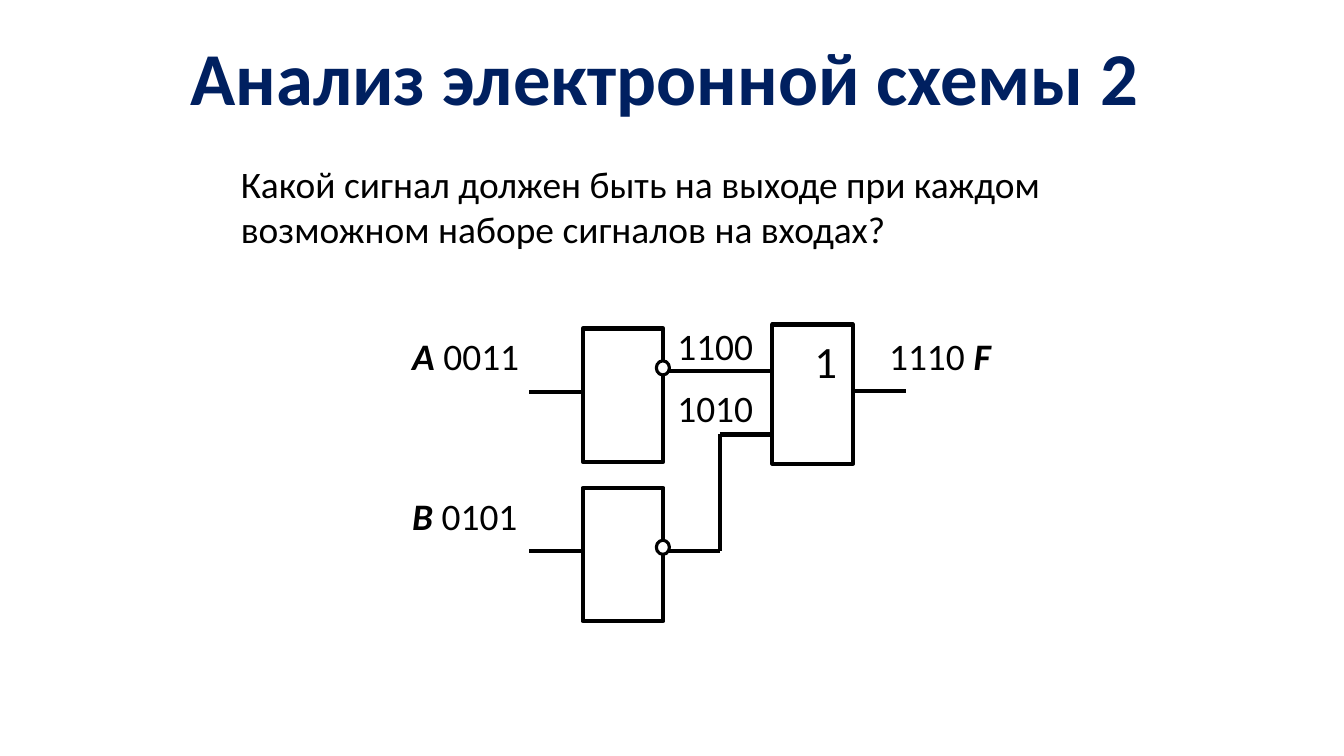
from pptx import Presentation
from pptx import util as u
from pptx.dml import color
from pptx.enum import shapes, text
from pptx.oxml import ns
from lxml import etree


def rgb(value):
    return color.RGBColor.from_string(value)


class Circuit:
    """Style and drawing methods for one slide."""
    font, ink, paper, navy = "Calibri", "000000", "FFFFFF", "002060"
    size, wire_width, ring_width = 26.7, 3, 2.25

    def __init__(self, prs):
        self.s = prs.slides.add_slide(prs.slide_layouts[6])

    def label(self, x, y, w, h, runs, size=None, fill=None, anchor="TOP", align="LEFT", spacing=1):
        """Each run is a pair: its text and whether it is emphasised."""
        tf = self.s.shapes.add_textbox(*map(u.Inches, (x, y, w, h))).text_frame
        tf.word_wrap = True
        tf.vertical_anchor = text.MSO_ANCHOR[anchor]
        p = tf.paragraphs[0]
        p.alignment = text.PP_ALIGN[align]
        p.line_spacing = spacing
        for words, (bold, italic) in runs:
            r = p.add_run()
            r.text = words
            r.font.name, r.font.size = self.font, u.Pt(size or self.size)
            r.font.bold, r.font.italic = bold, italic
            r.font.color.rgb = rgb(fill or self.ink)

    def outline(self, kind, x, y, w, h, width, fill=None):
        sp = self.s.shapes.add_shape(shapes.MSO_SHAPE[kind], *map(u.Inches, (x, y, w, h)))
        sp.shadow.inherit = False
        if fill:
            sp.fill.solid()
            sp.fill.fore_color.rgb = rgb(fill)
        else:
            sp.fill.background()
        sp.line.color.rgb = rgb(self.ink)
        sp.line.width = u.Pt(width)

    def gate(self, x, y, w, h):
        self.outline("RECTANGLE", x, y, w, h, self.wire_width)

    def inverter_ring(self, x, y):
        self.outline("OVAL", x, y, 0.13, 0.14, self.ring_width, self.paper)

    def wire(self, x1, y1, x2, y2):
        c = self.s.shapes.add_connector(
            shapes.MSO_CONNECTOR.STRAIGHT, *map(u.Inches, (x1, y1, x2, y2)))
        c.line.color.rgb = rgb(self.ink)
        c.line.width = u.Pt(self.wire_width)
        etree.SubElement(c._element.spPr, ns.qn("a:effectLst"))


PLAIN, BOLD, BOLD_ITALIC = (False, False), (True, False), (True, True)


def main():
    prs = Presentation()
    prs.slide_width, prs.slide_height = u.Inches(13.33), u.Inches(7.5)
    c = Circuit(prs)

    # Title and question
    c.label(0.68, 0.18, 12, 1.25, [("Анализ электронной схемы 2 ", BOLD)],
            size=53.3, fill=c.navy, anchor="MIDDLE", align="CENTER", spacing=0.9)
    c.label(2.29, 1.55, 8.34, 1, [(
        "Какой сигнал должен быть на выходе при каждом возможном наборе сигналов на входах?",
        PLAIN)])

    # Inputs with their inverters
    for name, signal, top, wire_y in (("А", " 0011", 3.26, 3.89), ("В", " 0101", 4.84, 5.47)):
        c.label(3.99, top, 1.54, 0.55, [(name, BOLD_ITALIC), (signal, PLAIN)])
        c.wire(5.25, wire_y, 5.78, wire_y)
        c.gate(5.78, top, 0.8, 1.32)

    # OR gate and output
    c.gate(7.66, 3.22, 0.8, 1.38)
    c.label(7.98, 3.26, 0.33, 0.64, [("1", PLAIN)], size=32)
    c.wire(8.46, 3.88, 8.99, 3.88)
    c.label(8.72, 3.26, 1.37, 0.55, [("1110 ", PLAIN), ("F", BOLD_ITALIC)])

    # Wires from the inverters to the OR gate
    for ends in ((6.62, 3.68, 7.67, 3.68), (6.62, 5.47, 7.14, 5.47),
                 (7.14, 5.47, 7.14, 4.31), (7.14, 4.31, 7.67, 4.31)):
        c.wire(*ends)
    for ring_y in (3.58, 5.36):
        c.inverter_ring(6.51, ring_y)

    # Inverted signals
    for signal, y, w in (("1100", 3.16, 1.33), ("1010", 3.77, 1.18)):
        c.label(6.62, y, w, 0.55, [(signal, PLAIN)])

    prs.save("out.pptx")


if __name__ == "__main__":
    main()
